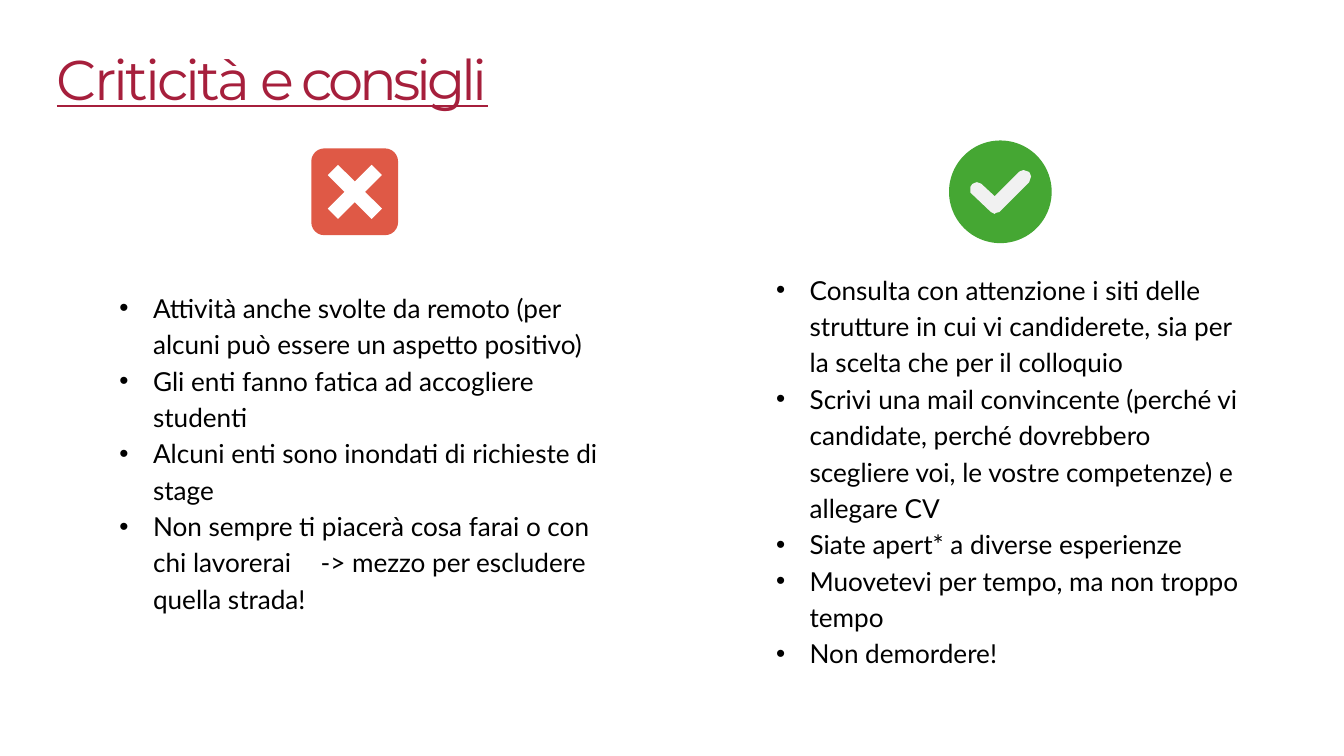
from dataclasses import dataclass

from pptx import Presentation
from pptx.dml.color import RGBColor
from pptx.enum.shapes import MSO_SHAPE as Shape
from pptx.enum.text import MSO_ANCHOR as Anchor, MSO_AUTO_SIZE as AutoSize, PP_ALIGN as Align
from pptx.util import Pt


@dataclass
class Box:
    left: float
    top: float
    width: float
    height: float


@dataclass
class BulletList:
    placeholder: int
    box: Box
    items: list[str]


@dataclass
class Icon:
    base: Shape
    base_color: str
    box: Box
    mark_left: float
    mark_top: float
    mark_color: str
    mark: list[tuple[float, float]]


TITLE_BOX = Box(59, 37.5, 1322, 162)
TITLE_RUNS = [("Criticità", -320), (" e consigli", -430)]  # spacing in 1/100 pt

LISTS = [
    BulletList(1, Box(127.5, 306.7, 538.5, 351.4), [
        "Attività anche svolte da remoto (per alcuni può essere un aspetto positivo)",
        "Gli enti fanno fatica ad accogliere studenti",
        "Alcuni enti sono inondati di richieste di stage",
        "Non sempre ti piacerà cosa farai o con chi lavorerai\t"
        "-> mezzo per escludere quella strada!",
    ]),
    BulletList(2, Box(831, 287.3, 506, 469.4), [
        "Consulta con attenzione i siti delle strutture in cui vi candiderete, "
        "sia per la scelta che per il colloquio",
        "Scrivi una mail convincente (perché vi candidate, perché dovrebbero "
        "scegliere voi, le vostre competenze) e allegare CV",
        "Siate apert* a diverse esperienze",
        "Muovetevi per tempo, ma non troppo tempo",
        "Non demordere!",
    ]),
]

CHECK = [
    (26, 46.8), (21.6, 45.4), (2.2, 25.9), (0, 23.8), (0, 18), (2.2, 15.1),
    (4.3, 13.7), (7.2, 13), (10.1, 13.7), (12.2, 15.1), (26, 28.1), (51.8, 2.2),
    (54, 0.7), (56.9, 0), (59.8, 0.7), (62.6, 2.2), (64.1, 4.3), (64.8, 7.2),
    (64.1, 10.1), (62.6, 13), (31, 44.6), (27.4, 46.1),
]
CROSS = [
    (10.8, 0), (28.8, 18), (46.8, 0), (57.6, 10.8), (39.6, 28.8), (57.6, 46.8),
    (46.8, 57.6), (28.8, 39.6), (10.8, 57.6), (0, 46.8), (18, 28.8), (0, 10.8),
]
ICONS = [
    Icon(Shape.OVAL, "45A733", Box(1016.8, 150.5, 110, 110), 1039.7, 182.2, "F1F1F1", CHECK),
    Icon(Shape.ROUNDED_RECTANGLE, "DF5946", Box(333.5, 159, 93, 93),
         351.2, 176.6, "FFFFFF", CROSS),
]


def color(value: str) -> RGBColor:
    return RGBColor.from_string(value)


def paint(shape, fill: str) -> None:
    shape.fill.solid()
    shape.fill.fore_color.rgb = color(fill)
    shape.line.fill.background()
    shape.shadow.inherit = False


def place(shape, box: Box, top_margin: float):
    """Move a placeholder and return its prepared text frame."""
    shape.left, shape.top = Pt(box.left), Pt(box.top)
    shape.width, shape.height = Pt(box.width), Pt(box.height)
    frame = shape.text_frame
    frame.auto_size = AutoSize.NONE
    frame.word_wrap = True
    frame.vertical_anchor = Anchor.TOP
    frame.margin_left = frame.margin_right = frame.margin_bottom = 0
    frame.margin_top = Pt(top_margin)
    return frame


def style(paragraph, font_name: str, size: float, font_color: str) -> None:
    paragraph.alignment = Align.LEFT
    paragraph.space_before = Pt(0)
    paragraph.font.name = font_name
    paragraph.font.size = Pt(size)
    paragraph.font.color.rgb = color(font_color)


def draw_title(slide) -> None:
    frame = place(slide.shapes.title, TITLE_BOX, 10)
    frame.margin_left = Pt(2)
    paragraph = frame.paragraphs[0]
    style(paragraph, "Montserrat", 60, "A61F3C")
    paragraph.space_before = Pt(1)
    paragraph.font.underline = True
    for text, spacing in TITLE_RUNS:
        run = paragraph.add_run()
        run.text = text
        run.font._element.set("spc", str(spacing))


def draw_list(slide, bullet_list: BulletList) -> None:
    frame = place(slide.placeholders[bullet_list.placeholder], bullet_list.box, 1)
    for index, item in enumerate(bullet_list.items):
        paragraph = frame.add_paragraph() if index else frame.paragraphs[0]
        paragraph.add_run().text = item
        style(paragraph, "Lato", 28, "000000")
        paragraph.line_spacing = 1.16
        properties = paragraph._p.get_or_add_pPr()
        properties.set("marL", str(Pt(36.5)))
        properties.set("indent", str(Pt(-36)))


def draw_icon(slide, icon: Icon) -> None:
    shapes = slide.shapes.add_group_shape().shapes
    box = icon.box
    base = shapes.add_shape(icon.base, Pt(box.left), Pt(box.top), Pt(box.width), Pt(box.height))
    paint(base, icon.base_color)
    if icon.base == Shape.ROUNDED_RECTANGLE:
        base.adjustments[0] = 0.15
    builder = shapes.build_freeform(*icon.mark[0], scale=Pt(1))
    builder.add_line_segments(icon.mark[1:], close=True)
    mark = builder.convert_to_shape(Pt(icon.mark_left), Pt(icon.mark_top))
    paint(mark, icon.mark_color)


def main() -> None:
    presentation = Presentation()
    presentation.slide_width, presentation.slide_height = Pt(1440), Pt(810)
    # Title with two content placeholders
    slide = presentation.slides.add_slide(presentation.slide_layouts[3])

    # Icons above the two columns
    for icon in ICONS:
        draw_icon(slide, icon)

    # Title and lists
    draw_title(slide)
    for bullet_list in LISTS:
        draw_list(slide, bullet_list)

    presentation.save("out.pptx")


if __name__ == "__main__":
    main()
